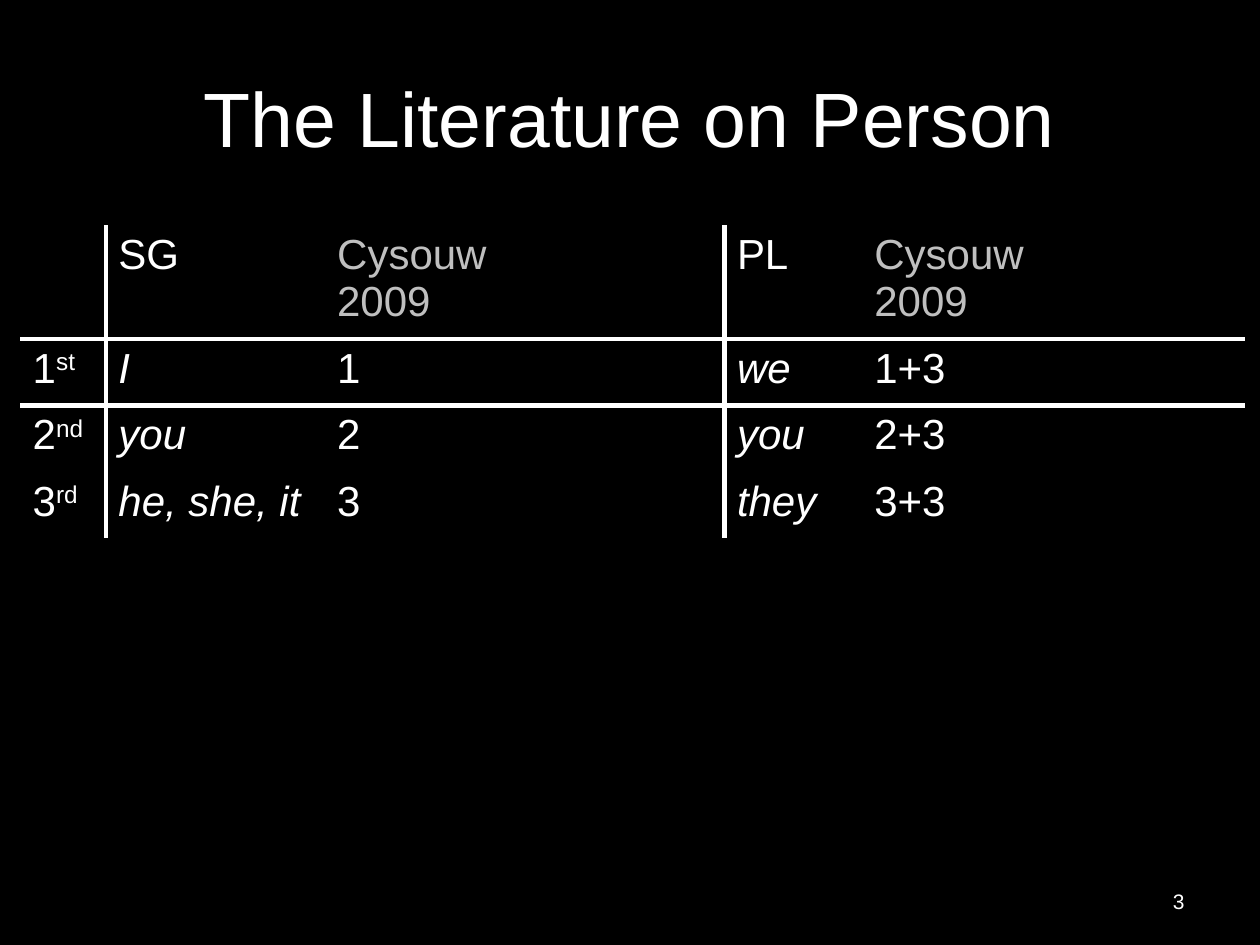
from lxml.etree import SubElement
from pptx import Presentation
from pptx.dml.color import RGBColor
from pptx.enum.text import MSO_ANCHOR as Anchor, PP_ALIGN as Align
from pptx.oxml.ns import qn
from pptx.util import Pt

COLORS = {"background": "000000", "text": "FFFFFF", "muted": "BFBFBF"}
COLUMN_WIDTHS = [49, 125, 122, 106.5, 78.5, 110, 109]
ROW_HEIGHTS = [60.5, 38, 38, 38]
RULED_COLUMNS = {0, 3}
RULED_ROWS = {0, 1}
HEADER = ["", "SG", "Cysouw 2009", "", "PL", "Cysouw 2009", ""]
PERSONS = [
    ("1", "st", "I", "we", "1+3"),
    ("2", "nd", "you", "you", "2+3"),
    ("3", "rd", "he, she, it", "they", "3+3"),
]


def add_text(paragraph, text, size=24, color="text", italic=False, superscript=False):
    """Add one formatted run to the paragraph."""
    run = paragraph.add_run()
    run.text = text
    run.font.name = "Arial"
    run.font.size = Pt(size)
    run.font.italic = italic
    run.font.color.rgb = RGBColor.from_string(COLORS[color])
    if superscript:
        run._r.get_or_add_rPr().set("baseline", "30000")


class SlideBuilder:
    """Hold the style and the current slide."""

    def __init__(self, slide, rule_width=3):
        self.slide = slide
        self.rule_width = rule_width
        fill = slide.background.fill
        fill.solid()
        fill.fore_color.rgb = RGBColor.from_string(COLORS["background"])

    def text_box(self, text, left, top, width, height, align, size):
        shape = self.slide.shapes.add_textbox(Pt(left), Pt(top), Pt(width), Pt(height))
        frame = shape.text_frame
        frame.word_wrap = True
        frame.vertical_anchor = Anchor.MIDDLE
        paragraph = frame.paragraphs[0]
        paragraph.alignment = align
        add_text(paragraph, text, size=size)

    def border(self, cell, side, ruled):
        line = SubElement(cell._tc.get_or_add_tcPr(), qn(f"a:ln{side}"))
        if ruled:
            line.set("w", str(Pt(self.rule_width)))
            fill = SubElement(line, qn("a:solidFill"))
            SubElement(fill, qn("a:srgbClr"), val=COLORS["text"])
        else:
            SubElement(line, qn("a:noFill"))

    def table(self, left, top):
        table = self.slide.shapes.add_table(
            len(ROW_HEIGHTS), len(COLUMN_WIDTHS), Pt(left), Pt(top),
            Pt(sum(COLUMN_WIDTHS)), Pt(sum(ROW_HEIGHTS)),
        ).table
        table.first_row = table.horz_banding = False
        for column, width in zip(table.columns, COLUMN_WIDTHS):
            column.width = Pt(width)
        for row_index, height in enumerate(ROW_HEIGHTS):
            table.rows[row_index].height = Pt(height)
            for column_index in range(len(COLUMN_WIDTHS)):
                cell = table.cell(row_index, column_index)
                self.border(cell, "L", column_index - 1 in RULED_COLUMNS)
                self.border(cell, "R", column_index in RULED_COLUMNS)
                self.border(cell, "T", row_index - 1 in RULED_ROWS)
                self.border(cell, "B", row_index in RULED_ROWS)
                cell.fill.background()
        return table


def fill_paradigm(table):
    """Write the header and the person rows."""

    def write(row, column, text, **style):
        add_text(table.cell(row, column).text_frame.paragraphs[0], text, **style)

    for column, label in enumerate(HEADER):
        if label:
            write(0, column, label, color="muted" if "2009" in label else "text")
    for row, (number, suffix, singular, plural, group) in enumerate(PERSONS, 1):
        write(row, 0, number)
        write(row, 0, suffix, superscript=True)
        write(row, 1, singular, italic=True)
        write(row, 2, number)
        write(row, 4, plural, italic=True)
        write(row, 5, group)


def main():
    """Build and save the slide."""
    presentation = Presentation()
    presentation.slide_width, presentation.slide_height = Pt(720), Pt(540)
    builder = SlideBuilder(presentation.slides.add_slide(presentation.slide_layouts[6]))
    builder.text_box("The Literature on Person", 36, 21.6, 648, 90, Align.CENTER, 44)
    builder.text_box("3", 516, 500.5, 168, 28.8, Align.RIGHT, 12)
    fill_paradigm(builder.table(11.5, 128.8))
    presentation.save("out.pptx")


if __name__ == "__main__":
    main()
